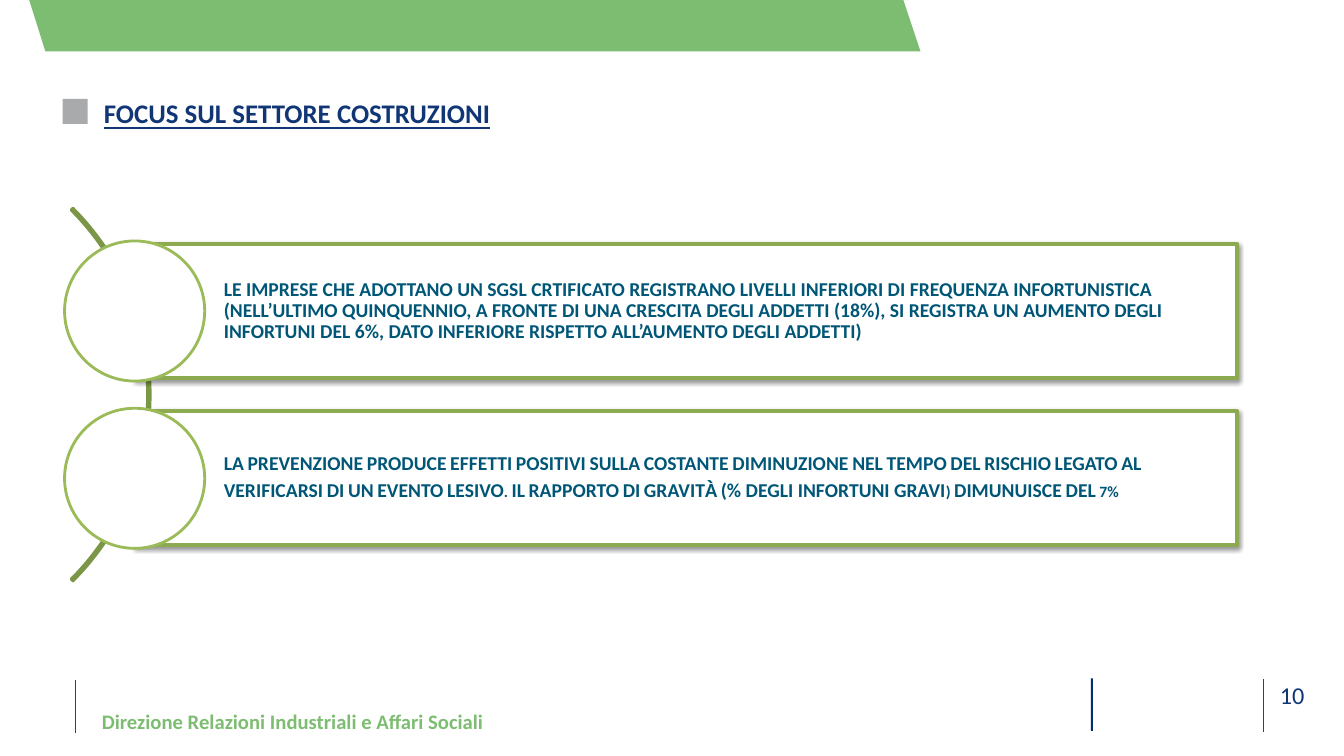
from pptx import Presentation
from pptx.dml.color import RGBColor
from pptx.enum.shapes import MSO_CONNECTOR as Connector, MSO_SHAPE as Shape
from pptx.enum.text import MSO_ANCHOR as Anchor, MSO_AUTO_SIZE as AutoSize, PP_ALIGN as Align
from pptx.oxml.ns import qn
from pptx.util import Inches, Pt
from lxml.etree import SubElement

COLORS = {
    "navy": "103676", "rule": "11498A", "bar": "002E6E", "gray": "939598",
    "green": "7DBD71", "arc": "7C9647", "frame": "8DAA51", "ring": "9BBB59",
    "teal": "005677", "white": "FFFFFF", "black": "000000",
}


class SlideBuilder:
    font_name = "Calibri"

    def __init__(self, slide):
        self.slide = slide
        self.shapes = slide.shapes

    def color(self, name):
        return RGBColor.from_string(COLORS[name])

    def place(self, item, box):
        item.left, item.top, item.width, item.height = map(Inches, box)

    def paint(self, item, fill=None, line=None, weight=1):
        item.shadow.inherit = False
        if fill:
            item.fill.solid()
            item.fill.fore_color.rgb = self.color(fill)
        else:
            item.fill.background()
        if line:
            item.line.color.rgb = self.color(line)
            item.line.width = Pt(weight)
        else:
            item.line.fill.background()
        return item

    def shape(self, kind, box, **style):
        return self.paint(self.shapes.add_shape(kind, *map(Inches, box)), **style)

    def outline(self, points, **style):
        corners = [(Inches(x), Inches(y)) for x, y in points]
        builder = self.shapes.build_freeform(*corners[0])
        builder.add_line_segments(corners[1:], close=True)
        return self.paint(builder.convert_to_shape(), **style)

    def rule(self, x, top, length):
        line = self.shapes.add_connector(
            Connector.STRAIGHT, Inches(x), Inches(top), Inches(x), Inches(top + length))
        line.line.color.rgb = self.color("rule")
        line.line.width = Pt(1)
        SubElement(line._element.spPr, qn("a:effectLst"))

    def fade(self, item, percent):
        color = item._element.spPr.find(qn("a:solidFill"))[0]
        SubElement(color, qn("a:alpha"), val=str(percent * 1000))

    def drop_shadow(self, item):
        effects = item._element.spPr.find(qn("a:effectLst"))
        shadow = SubElement(effects, qn("a:outerShdw"), blurRad=str(Pt(3.1)),
                            dist=str(Pt(1.6)), dir="5400000", rotWithShape="0")
        color = SubElement(shadow, qn("a:srgbClr"), val=COLORS["black"])
        SubElement(color, qn("a:alpha"), val="38000")

    def set_text(self, item, runs, size, color, bold=False, align=Align.LEFT,
                 anchor=Anchor.TOP, insets=(0, 0, 0, 0)):
        frame = item.text_frame
        frame.word_wrap = True
        frame.auto_size = AutoSize.NONE
        frame.vertical_anchor = anchor
        (frame.margin_left, frame.margin_top,
         frame.margin_right, frame.margin_bottom) = map(Inches, insets)
        paragraph = frame.paragraphs[0]
        paragraph.alignment = align
        font = paragraph.font
        font.name, font.size, font.bold = self.font_name, Pt(size), bold
        font.color.rgb = self.color(color)
        for text, small_caps, run_size in runs:
            run = paragraph.add_run()
            run.text = text
            if small_caps:
                run._r.get_or_add_rPr().set("cap", "small")
            if run_size:
                run.font.size = Pt(run_size)
        return paragraph

    def title(self, text, box):
        title = self.shapes.title
        self.place(title, box)
        paragraph = self.set_text(title, [(text, True, None)], 24, "navy", bold=True,
                                  anchor=Anchor.MIDDLE)
        paragraph.font.underline = True

    def department(self, text, box):
        body = self.slide.placeholders[1]
        self.place(body, box)
        paragraph = self.set_text(body, [(text, False, None)], 14.7, "green", bold=True,
                                  insets=(0, 0.28, 0, 0))
        paragraph.space_before = Pt(0)
        properties = paragraph._p.get_or_add_pPr()
        properties.set("marL", "0")
        properties.set("indent", "0")
        properties.insert_element_before(
            properties.makeelement(qn("a:buNone"), {}), "a:tabLst", "a:defRPr", "a:extLst")

    def page_number(self, text, box):
        number = self.shapes.add_textbox(*map(Inches, box))
        self.set_text(number, [(text, False, None)], 17.3, "navy", align=Align.CENTER)

    def finding(self, top, runs):
        panel = self.shape(Shape.RECTANGLE, (1.34, top, 10.93, 1.33),
                           fill="white", line="frame", weight=3)
        self.drop_shadow(panel)
        paragraph = self.set_text(panel, runs, 14, "teal", bold=True, anchor=Anchor.MIDDLE,
                                  insets=(0.88, 0.04, 0.04, 0.04))
        paragraph.line_spacing = 0.9
        self.shape(Shape.OVAL, (0.64, top - 0.03, 1.39, 1.39),
                   fill="white", line="ring", weight=2)


def main():
    deck = Presentation()
    deck.slide_width, deck.slide_height = Inches(13.33), Inches(7.5)
    page = SlideBuilder(deck.slides.add_slide(deck.slide_layouts[1]))

    page.rule(0.75, 6.75, 0.52)
    page.rule(12.53, 6.74, 0.52)
    page.shape(Shape.RECTANGLE, (10.82, 6.73, 0.02, 0.52), fill="bar")

    page.title("focus sul settore costruzioni", (1.03, 0.86, 11.27, 0.47))
    page.page_number("10", (12.56, 6.75, 0.51, 0.31))
    title_marker = page.shape(Shape.RECTANGLE, (0.62, 0.98, 0.25, 0.25), fill="gray")
    page.fade(title_marker, 80)
    page.outline([(0.29, 0), (0.45, 0.51), (9.13, 0.51), (8.96, 0)], fill="green")
    page.department("Direzione Relazioni Industriali e Affari Sociali",
                    (1.01, 6.75, 5.87, 0.52))

    arc = page.shape(Shape.BLOCK_ARC, (-3.74, 1.3, 5.23, 5.23), line="arc", weight=2)
    for index, value in enumerate((189, 27, 0.005)):
        arc.adjustments[index] = value

    findings = [
        [("LE IMPRESE CHE ADOTTANO UN SGSL CRTIFICATO REGISTRANO LIVELLI INFERIORI DI "
          "FREQUENZA INFORTUNISTICA (NELL’ULTIMO QUINQUENNIO, A FRONTE DI UNA CRESCITA "
          "DEGLI ADDETTI (18%), SI REGISTRA UN AUMENTO DEGLI INFORTUNI DEL 6%, DATO "
          "INFERIORE RISPETTO ALL’AUMENTO DEGLI ADDETTI)", False, None)],
        [("LA PREVENZIONE PRODUCE EFFETTI POSITIVI SULLA COSTANTE DIMINUZIONE NEL TEMPO "
          "DEL RISCHIO LEGATO AL VERIFICARSI DI UN EVENTO LESIVO. IL RAPPORTO DI GRAVIT",
          True, None),
         ("à", True, 18),
         (" ", True, None),
         ("(% DEGLI INFORTUNI GRAVI", False, None),
         (") DIMUNUISCE DEL 7%", True, None)],
    ]
    for row, runs in enumerate(findings):
        page.finding(2.42 + row * 1.66, runs)

    deck.save("out.pptx")


if __name__ == "__main__":
    main()
